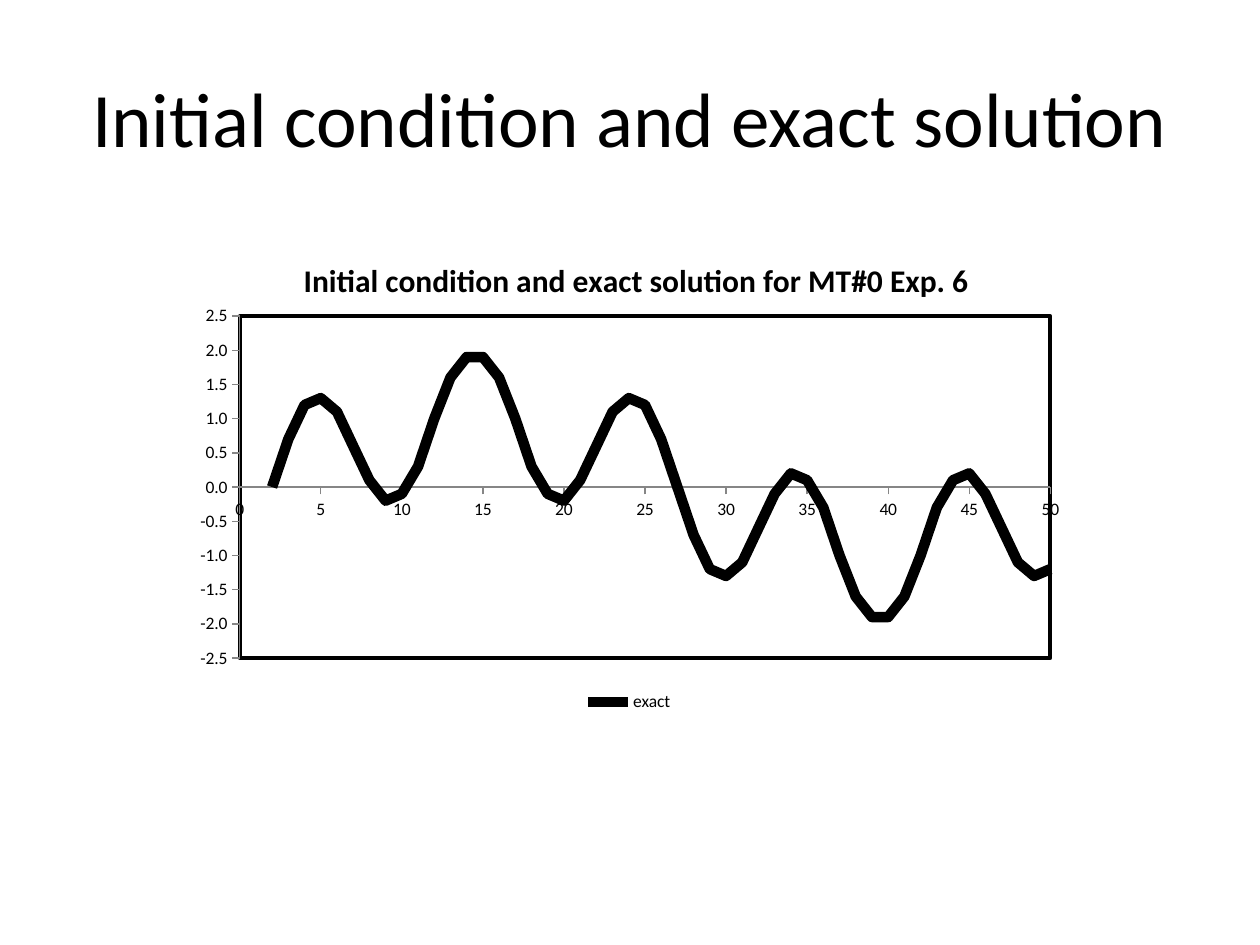
from dataclasses import dataclass
from math import pi, sin

from lxml.etree import SubElement
from pptx import Presentation
from pptx.chart.data import XyChartData
from pptx.dml.color import RGBColor
from pptx.enum.chart import XL_CHART_TYPE, XL_LEGEND_POSITION, XL_TICK_MARK
from pptx.enum.text import MSO_ANCHOR, PP_ALIGN
from pptx.oxml import parse_xml
from pptx.oxml.ns import nsdecls, qn
from pptx.util import Inches, Pt


@dataclass(frozen=True)
class Theme:
    font: str = "Calibri"
    ink: RGBColor = RGBColor(0x00, 0x00, 0x00)
    axis: RGBColor = RGBColor(0x86, 0x86, 0x86)
    paper: str = "FFFFFF"
    frame: str = "000000"
    title_size: Pt = Pt(44)
    chart_title_size: Pt = Pt(18)
    label_size: Pt = Pt(10)
    curve_width: Pt = Pt(6)
    axis_width: Pt = Pt(0.75)
    frame_width: Pt = Pt(2.25)


THEME = Theme()


def format_font(font, size, bold=False):
    font.name = THEME.font
    font.size = size
    font.bold = bold
    font.color.rgb = THEME.ink


def write_text(text_frame, text, size, bold=False):
    paragraph = text_frame.paragraphs[0]
    paragraph.alignment = PP_ALIGN.CENTER
    run = paragraph.add_run()
    run.text = text
    format_font(run.font, size, bold)


def set_layout(parent, index, **fractions):
    """Place a chart part by fractions of the chart box."""
    layout = parent.find(qn("c:layout"))
    if layout is not None:
        parent.remove(layout)
    layout = parse_xml(f"<c:layout {nsdecls('c')}/>")
    parent.insert(index, layout)
    manual = SubElement(layout, qn("c:manualLayout"))
    if "w" in fractions:
        SubElement(manual, qn("c:layoutTarget")).set("val", "inner")
    for name in ("xMode", "yMode"):
        SubElement(manual, qn(f"c:{name}")).set("val", "edge")
    for name, value in fractions.items():
        SubElement(manual, qn(f"c:{name}")).set("val", str(value))


def add_title(slide, text, left, top, width, height):
    title = slide.shapes.title
    title.left, title.top, title.width, title.height = left, top, width, height
    title.text_frame.vertical_anchor = MSO_ANCHOR.MIDDLE
    title.text_frame.word_wrap = True
    write_text(title.text_frame, text, THEME.title_size)


def exact_solution_data():
    """Sum of a long and a short sine wave, starting at grid point 2."""
    data = XyChartData()
    series = data.add_series("exact")
    for point in range(2, 52):
        phase = 2 * pi * (point - 2)
        series.add_data_point(point, round(sin(phase / 50) + sin(phase / 10), 1))
    return data


def format_axis(axis, minimum, maximum, step, number_format):
    axis.minimum_scale, axis.maximum_scale = minimum, maximum
    axis.major_unit = step
    axis.has_major_gridlines = False
    axis.major_tick_mark = XL_TICK_MARK.OUTSIDE
    axis.minor_tick_mark = XL_TICK_MARK.NONE
    axis.tick_labels.number_format = number_format
    axis.tick_labels.number_format_is_linked = False
    format_font(axis.tick_labels.font, THEME.label_size)
    axis.format.line.color.rgb = THEME.axis
    axis.format.line.width = THEME.axis_width


def add_solution_chart(slide, title, left, top, width, height):
    chart = slide.shapes.add_chart(
        XL_CHART_TYPE.XY_SCATTER_LINES_NO_MARKERS,
        left, top, width, height, exact_solution_data(),
    ).chart
    format_font(chart.font, THEME.label_size)

    # Heading
    chart.has_title = True
    write_text(chart.chart_title.text_frame, title, THEME.chart_title_size, bold=True)
    set_layout(chart.chart_title._element, 1, x=0.13, y=0.05)

    # Axes
    format_axis(chart.category_axis, 0, 50, 5, "General")
    format_axis(chart.value_axis, -2.5, 2.5, 0.5, "#,##0.0")

    # Curve
    plot = chart.plots[0]
    plot.vary_by_categories = False
    series = plot.series[0]
    series.smooth = False
    series.format.line.color.rgb = THEME.ink
    series.format.line.width = THEME.curve_width

    # Framed plot area
    plot_area = chart._chartSpace.chart.plotArea
    set_layout(plot_area, 0, x=0.065, y=0.18, w=0.905, h=0.7)
    plot_area.append(parse_xml(
        f'<c:spPr {nsdecls("c", "a")}>'
        f'<a:solidFill><a:srgbClr val="{THEME.paper}"/></a:solidFill>'
        f'<a:ln w="{THEME.frame_width}"><a:solidFill>'
        f'<a:srgbClr val="{THEME.frame}"/></a:solidFill></a:ln></c:spPr>'
    ))

    # Legend
    chart.has_legend = True
    chart.legend.position = XL_LEGEND_POSITION.BOTTOM
    chart.legend.include_in_layout = False
    format_font(chart.legend.font, THEME.label_size)


def main():
    presentation = Presentation()
    presentation.slide_width, presentation.slide_height = Inches(10), Inches(7.5)
    slide = presentation.slides.add_slide(presentation.slide_layouts[5])
    add_title(
        slide, "Initial condition and exact solution",
        Inches(0.5), Inches(0.3), Inches(9), Inches(1.25),
    )
    add_solution_chart(
        slide, "Initial condition and exact solution for MT#0 Exp. 6",
        Inches(1.44), Inches(1.81), Inches(7.11), Inches(3.88),
    )
    presentation.save("out.pptx")


if __name__ == "__main__":
    main()
